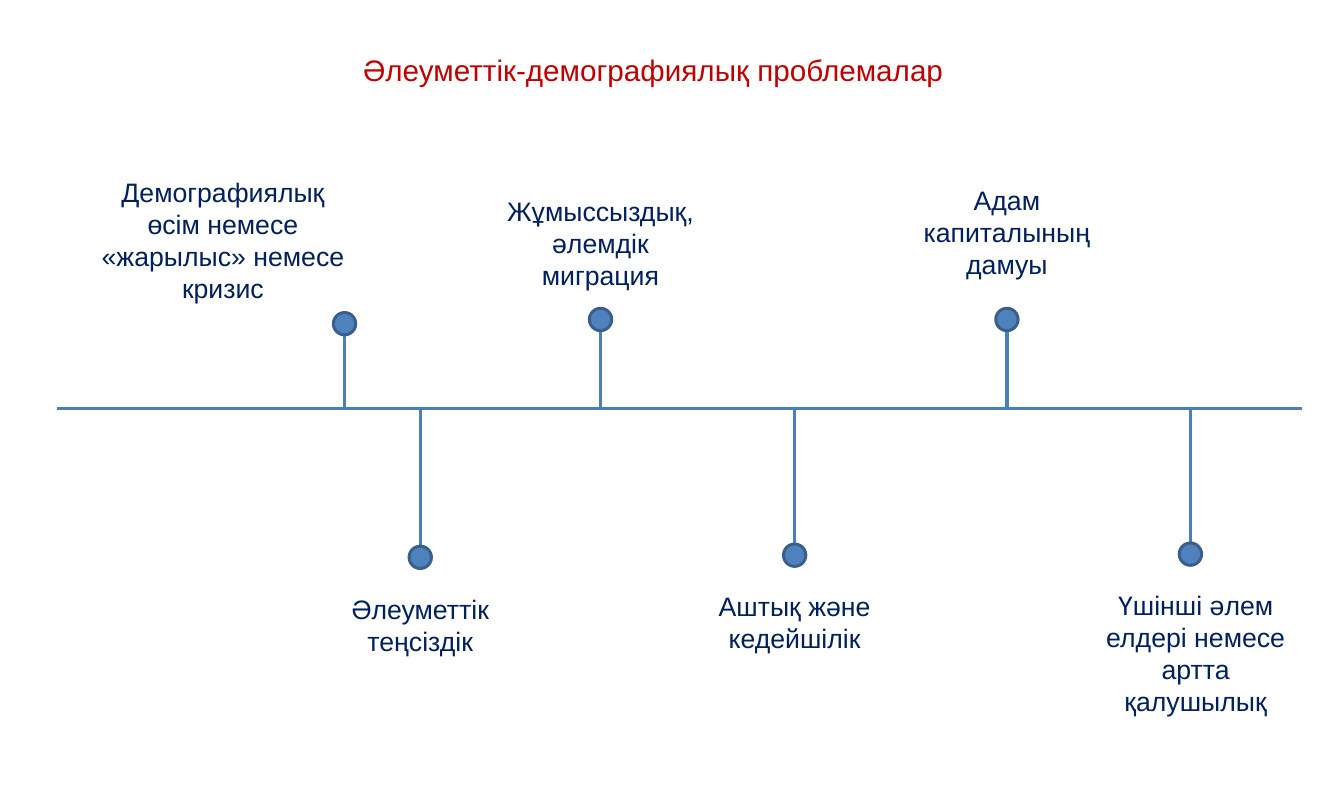
from dataclasses import dataclass

from lxml.etree import SubElement
from pptx import Presentation
from pptx.dml.color import RGBColor
from pptx.enum.shapes import MSO_CONNECTOR, MSO_SHAPE
from pptx.enum.text import MSO_ANCHOR, MSO_AUTO_SIZE, PP_ALIGN
from pptx.oxml.ns import qn
from pptx.util import Inches, Pt

COLORS = {
    "title": "C00000",
    "label": "002060",
    "line": "4B7EBC",
    "dot": "4F81BD",
    "dot_edge": "3A5F8C",
}
FONT = "Arial"

# Grid of 126 columns by 75 rows
WIDTH, HEIGHT = Inches(12.6), Inches(7.5)
COLUMN, ROW = WIDTH / 126, HEIGHT / 75
AXIS_ROW = 38.3
AXIS_START, AXIS_END = 5.3, 122.1
DOT_SIZE = 2.1
LINE_ROWS, PADDING_ROWS = 3, 1.1


@dataclass
class Problem:
    text: str
    lines: int
    stem: float
    dot_row: float
    label_row: float
    label_center: float
    label_width: float = 20


PROBLEMS = [
    Problem("Демографиялық өсім немесе «жарылыс» немесе кризис",
            4, 32.3, 30.35, 16, 20.9, 24.8),
    Problem("Әлеуметтік теңсіздік", 2, 39.4, 52.25, 55.1, 39.4, 22.3),
    Problem("Жұмыссыздық, әлемдік миграция", 3, 56.3, 29.95, 17.8, 56.3),
    Problem("Аштық және кедейшілік", 2, 74.5, 52.05, 54.8, 74.5),
    Problem("Адам капиталының дамуы", 3, 94.4, 29.95, 16.7, 94.4),
    Problem("Үшінші әлем елдері немесе артта қалушылық",
            4, 111.6, 51.95, 54.7, 112.1),
]


def color(name):
    return RGBColor.from_string(COLORS[name])


def across(columns):
    return round(columns * COLUMN)


def down(rows):
    return round(rows * ROW)


def place(left, top, width, height):
    return across(left), down(top), across(width), down(height)


def write(box, text, size, color_name):
    frame = box.text_frame
    frame.word_wrap = True
    frame.auto_size = MSO_AUTO_SIZE.NONE
    frame.vertical_anchor = MSO_ANCHOR.TOP
    para = frame.paragraphs[0]
    para.alignment = PP_ALIGN.CENTER
    span = para.add_run()
    span.text = text
    span.font.name = FONT
    span.font.size = Pt(size)
    span.font.color.rgb = color(color_name)


def add_title(page, text):
    title = page.shapes.title
    title.left, title.top, title.width, title.height = place(8.7, 4.4, 105.1, 4.4)
    write(title, text, 20, "title")


def add_line(page, start, end):
    line = page.shapes.add_connector(
        MSO_CONNECTOR.STRAIGHT,
        across(start[0]), down(start[1]), across(end[0]), down(end[1]))
    line.line.color.rgb = color("line")
    line.line.width = Pt(2.25)
    SubElement(line._element.spPr, qn("a:effectLst"))


def add_dot(page, column, row):
    half = DOT_SIZE / 2
    dot = page.shapes.add_shape(
        MSO_SHAPE.OVAL, *place(column - half, row - half, DOT_SIZE, DOT_SIZE))
    dot.shadow.inherit = False
    dot.fill.solid()
    dot.fill.fore_color.rgb = color("dot")
    dot.line.color.rgb = color("dot_edge")
    dot.line.width = Pt(2)


def add_label(page, problem):
    box = page.shapes.add_textbox(*place(
        problem.label_center - problem.label_width / 2, problem.label_row,
        problem.label_width, PADDING_ROWS + LINE_ROWS * problem.lines))
    write(box, problem.text, 18, "label")


def main():
    deck = Presentation()
    deck.slide_width, deck.slide_height = WIDTH, HEIGHT
    page = deck.slides.add_slide(deck.slide_layouts[5])

    # Title and horizontal axis
    add_title(page, "Әлеуметтік-демографиялық проблемалар")
    add_line(page, (AXIS_START, AXIS_ROW), (AXIS_END, AXIS_ROW))

    # Problems above and below the axis
    for problem in PROBLEMS:
        add_line(page, (problem.stem, AXIS_ROW), (problem.stem, problem.dot_row))
        add_dot(page, problem.stem, problem.dot_row)
        add_label(page, problem)

    deck.save("out.pptx")


if __name__ == "__main__":
    main()
